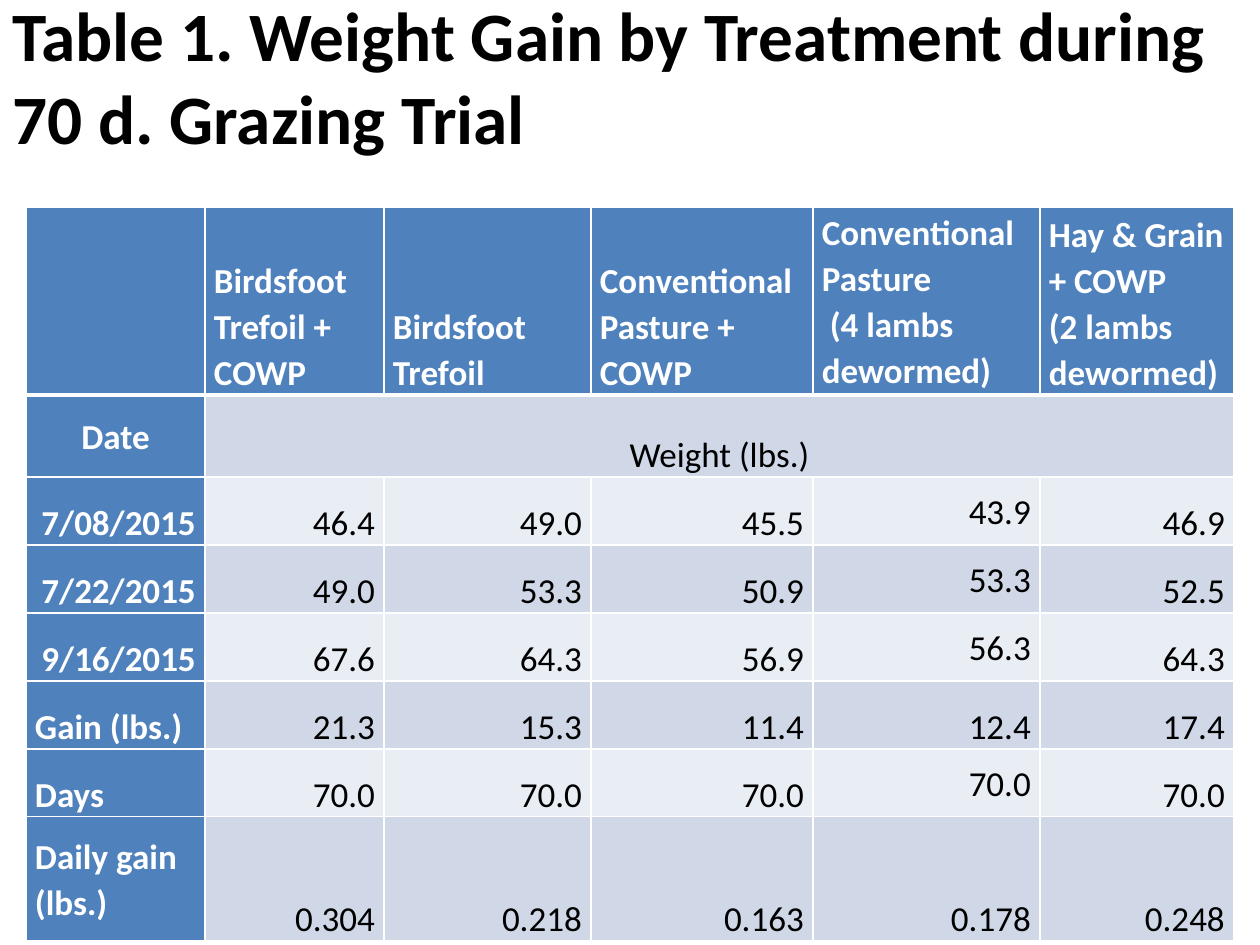
from lxml.etree import SubElement
from pptx import Presentation
from pptx.dml.color import RGBColor
from pptx.enum.text import MSO_ANCHOR, MSO_AUTO_SIZE, PP_ALIGN
from pptx.oxml.ns import qn
from pptx.util import Pt

PX = 914400 // 126
TITLE = "Table 1. Weight Gain by Treatment during 70 d. Grazing Trial\v"
HEAD = ["", "Birdsfoot Trefoil + COWP", "Birdsfoot Trefoil",
        "Conventional Pasture + COWP",
        "Conventional\vPasture\n (4 lambs dewormed)",
        "Hay & Grain + COWP\n(2 lambs dewormed)"]
BODY = [
    ["Date", "Weight (lbs.)", "", "", "", ""],
    ["7/08/2015", "46.4", "49.0", "45.5", "43.9", "46.9"],
    ["7/22/2015", "49.0", "53.3", "50.9", "53.3", "52.5"],
    ["9/16/2015", "67.6", "64.3", "56.9", "56.3", "64.3"],
    ["Gain (lbs.)", "21.3", "15.3", "11.4", "12.4", "17.4"],
    ["Days", "70.0", "70.0", "70.0", "70.0", "70.0"],
    ["Daily gain (lbs.)", "0.304", "0.218", "0.163", "0.178", "0.248"],
]
ROWS = [HEAD] + BODY
WIDE = [179, 179, 207, 222, 227, 194]
HIGH = [188, 82] + [68] * 5 + [124]
LEFT, TOP = 26, 207
MIDDLE = {(0, 4), (1, 0), (2, 4), (3, 4), (4, 4), (6, 4), (7, 0)}
BLUE, BANDS = "4F81BD", ("E9EDF4", "D0D8E8")
WHITE, BLACK = "FFFFFF", "000000"


def color(code):
    return RGBColor.from_string(code)


def put(item, values):
    for name, value in values.items():
        setattr(item, name, value)


def style(para, size, code, bold, align, gap=None):
    put(para, {"alignment": align, "line_spacing": gap})
    put(para.font, {"size": Pt(size), "name": "Calibri", "bold": bold})
    para.font.color.rgb = color(code)
    for run in para.runs:
        put(run.font, {"size": Pt(size), "name": "Calibri", "bold": bold})
        run.font.color.rgb = color(code)


def edge(cell, side, width):
    line = SubElement(cell._tc.get_or_add_tcPr(), qn("a:ln" + side),
                      w=str(Pt(width)))
    fill = SubElement(line, qn("a:solidFill"))
    SubElement(fill, qn("a:srgbClr"), val=WHITE)


def align(row, col):
    if row == 1:
        return PP_ALIGN.CENTER
    if row == 0 or (col == 0 and row > 4):
        return PP_ALIGN.LEFT
    return PP_ALIGN.RIGHT


def dress(cell, row, col):
    label = row == 0 or col == 0
    cell.text = ROWS[row][col]
    mid = (row, col) in MIDDLE
    put(cell, {"margin_left": 9 * PX, "margin_right": 9 * PX,
               "margin_top": 0, "margin_bottom": 0,
               "vertical_anchor": MSO_ANCHOR.MIDDLE if mid else MSO_ANCHOR.BOTTOM})
    # Thick rule between the heading and the body
    thick = {("B", 0), ("T", 1)}
    for side in "LRTB":
        edge(cell, side, 3 if (side, row) in thick else 1)
    cell.fill.solid()
    cell.fill.fore_color.rgb = color(BLUE if label else BANDS[row % 2])
    for para in cell.text_frame.paragraphs:
        style(para, 20, WHITE if label else BLACK, label, align(row, col), 1.07)


deck = Presentation()
put(deck, {"slide_width": 1260 * PX, "slide_height": 945 * PX})
slide = deck.slides.add_slide(deck.slide_layouts[5])

# Weight table
grid = slide.shapes.add_table(len(ROWS), len(WIDE), LEFT * PX, TOP * PX,
                              sum(WIDE) * PX, sum(HIGH) * PX).table
for part, wide in zip(grid.columns, WIDE):
    part.width = wide * PX
for part, high in zip(grid.rows, HIGH):
    part.height = high * PX
for row in range(len(ROWS)):
    for col in range(len(WIDE)):
        dress(grid.cell(row, col), row, col)
grid.cell(1, 1).merge(grid.cell(1, 5))

# Title
title = slide.shapes.title
put(title, {"left": 0, "top": 38 * PX, "width": 1260 * PX, "height": 157 * PX})
frame = title.text_frame
frame.text = TITLE
put(frame, {"word_wrap": True, "auto_size": MSO_AUTO_SIZE.NONE,
            "vertical_anchor": MSO_ANCHOR.MIDDLE})
style(frame.paragraphs[0], 39.6, BLACK, True, PP_ALIGN.LEFT)

deck.save("out.pptx")
